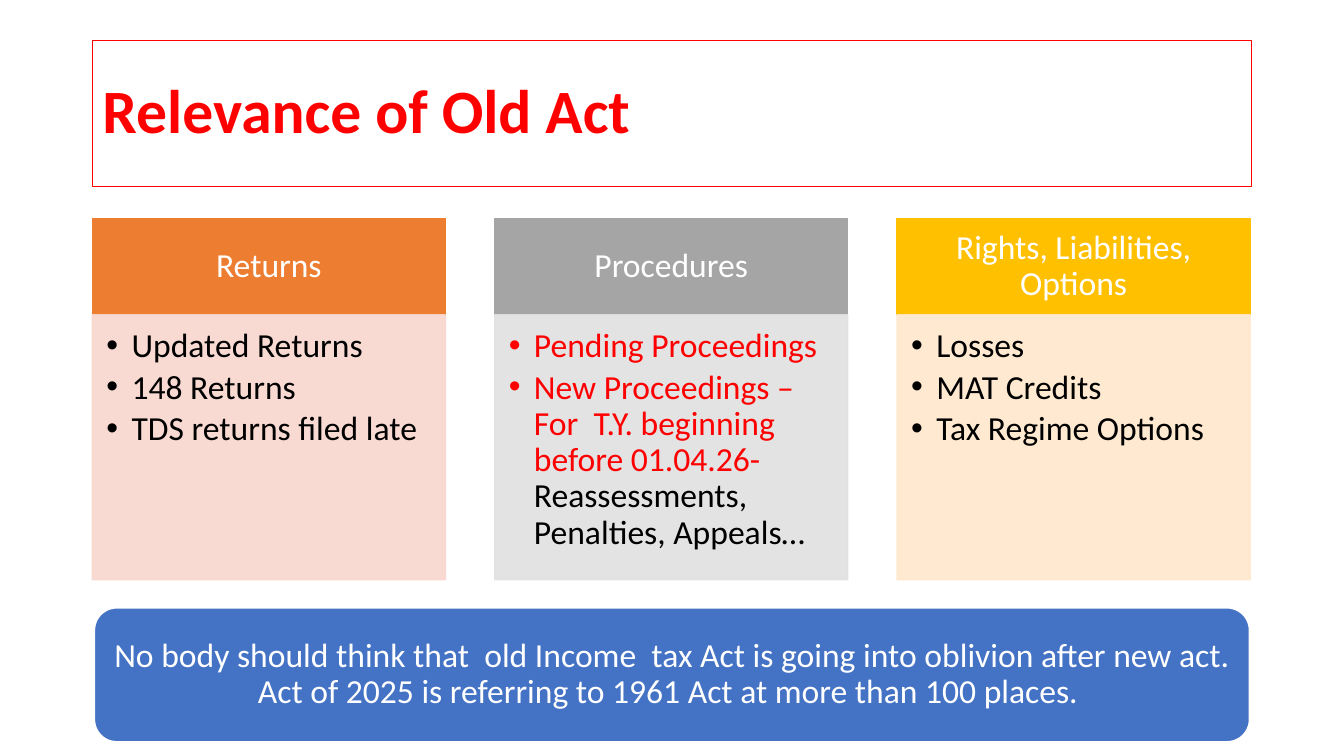
from lxml import etree
from pptx import Presentation
from pptx.dml.color import RGBColor
from pptx.enum.shapes import MSO_SHAPE
from pptx.enum.text import MSO_ANCHOR, MSO_AUTO_SIZE, PP_ALIGN
from pptx.oxml.ns import qn
from pptx.util import Pt

RECT, ROUNDED = MSO_SHAPE.RECTANGLE, MSO_SHAPE.ROUNDED_RECTANGLE
TOP, MIDDLE = MSO_ANCHOR.TOP, MSO_ANCHOR.MIDDLE
LEFT, CENTER = PP_ALIGN.LEFT, PP_ALIGN.CENTER
FONT = "Calibri"
WHITE, BLACK, RED, BLUE = "FFFFFF", "000000", "FF0000", "4472C4"

# Each column: heading, heading colour, body colour, bullets as (text, colour) runs
COLUMNS = [
    ("Returns", "ED7D31", "F8D7CE", [
        [("Updated Returns", BLACK)],
        [("148 Returns", BLACK)],
        [("TDS returns filed late", BLACK)],
    ]),
    ("Procedures", "A5A5A5", "E1E1E1", [
        [("Pending Proceedings", RED)],
        [("New Proceedings – For  T.Y. beginning before 01.04.26- ", RED),
         ("Reassessments, Penalties, Appeals…", BLACK)],
    ]),
    ("Rights, Liabilities, Options", "FFC000", "FFE8CC", [
        [("Losses", BLACK)],
        [("MAT Credits", BLACK)],
        [("Tax Regime Options", BLACK)],
    ]),
]
CLOSING = ("No body should think that  old Income  tax Act is going into oblivion "
           "after new act. Act of 2025 is referring to 1961 Act at more than 100 places. ")


def rgb(color):
    return RGBColor.from_string(color)


def add_panel(s, kind, box, fill, line, insets, anchor):
    sp = s.shapes.add_shape(kind, *map(Pt, box))
    sp.shadow.inherit = False
    sp.fill.solid()
    sp.fill.fore_color.rgb = rgb(fill)
    sp.line.color.rgb = rgb(line)
    sp.line.width = Pt(1)
    tf = sp.text_frame
    tf.word_wrap = True
    tf.vertical_anchor = anchor
    tf.margin_left, tf.margin_top, tf.margin_right, tf.margin_bottom = map(Pt, insets)
    return sp


def write(p, runs, size=24, align=CENTER, bold=False):
    p.alignment = align
    p.line_spacing = 0.9
    for text, color in runs:
        r = p.add_run()
        r.text = text
        r.font.name = FONT
        r.font.size = Pt(size)
        r.font.bold = bold
        r.font.color.rgb = rgb(color)


def add_bullet(p):
    pPr = p._p.get_or_add_pPr()
    pPr.set("marL", str(Pt(18)))
    pPr.set("indent", str(-Pt(18)))
    etree.SubElement(pPr, qn("a:buFont")).set("typeface", "Arial")
    etree.SubElement(pPr, qn("a:buChar")).set("char", "•")


def set_opacity(sp, percent):
    for clr in sp._element.spPr.iter(qn("a:srgbClr")):
        etree.SubElement(clr, qn("a:alpha")).set("val", str(percent * 1000))


def add_title(s, box):
    sp = s.shapes.title
    sp.left, sp.top, sp.width, sp.height = map(Pt, box)
    sp.line.color.rgb = rgb(RED)
    sp.line.width = Pt(0.25)
    tf = sp.text_frame
    tf.auto_size = MSO_AUTO_SIZE.NONE
    tf.vertical_anchor = MIDDLE
    write(tf.paragraphs[0], [("Relevance of Old Act", RED)], 44, LEFT, True)


def add_column(s, box, heading, head_color, body_color, bullets):
    x, y, w, h = box
    head_h = 68.8
    # Heading band
    head = add_panel(s, RECT, (x, y, w, head_h), head_color, head_color,
                     (13.5, 7.7, 13.5, 7.7), MIDDLE)
    write(head.text_frame.paragraphs[0], [(heading, WHITE)])
    # Bulleted body
    body = add_panel(s, RECT, (x, y + head_h, w, h - head_h), body_color, body_color,
                     (10, 10, 13.5, 15), TOP)
    set_opacity(body, 90)
    tf = body.text_frame
    for i, runs in enumerate(bullets):
        p = tf.add_paragraph() if i else tf.paragraphs[0]
        add_bullet(p)
        write(p, runs, align=LEFT)
        p.space_after = Pt(3.6)


def add_columns(s, box):
    x, y, w, h = box
    col_w = 252.2
    pitch = (w - col_w) / (len(COLUMNS) - 1)
    for i, column in enumerate(COLUMNS):
        add_column(s, (x + i * pitch, y, col_w, h), *column)


def add_banner(s, box):
    sp = add_panel(s, ROUNDED, box, BLUE, WHITE, [7.2] * 4, MIDDLE)
    write(sp.text_frame.paragraphs[0], [(CLOSING, WHITE)])


def main():
    prs = Presentation()
    prs.slide_width, prs.slide_height = Pt(960), Pt(540)
    s = prs.slides.add_slide(prs.slide_layouts[5])
    add_title(s, (66, 28.75, 828, 104.4))
    add_columns(s, (66, 156, 827, 258))
    add_banner(s, (67.5, 434.2, 825, 95.6))
    prs.save("out.pptx")


if __name__ == "__main__":
    main()
